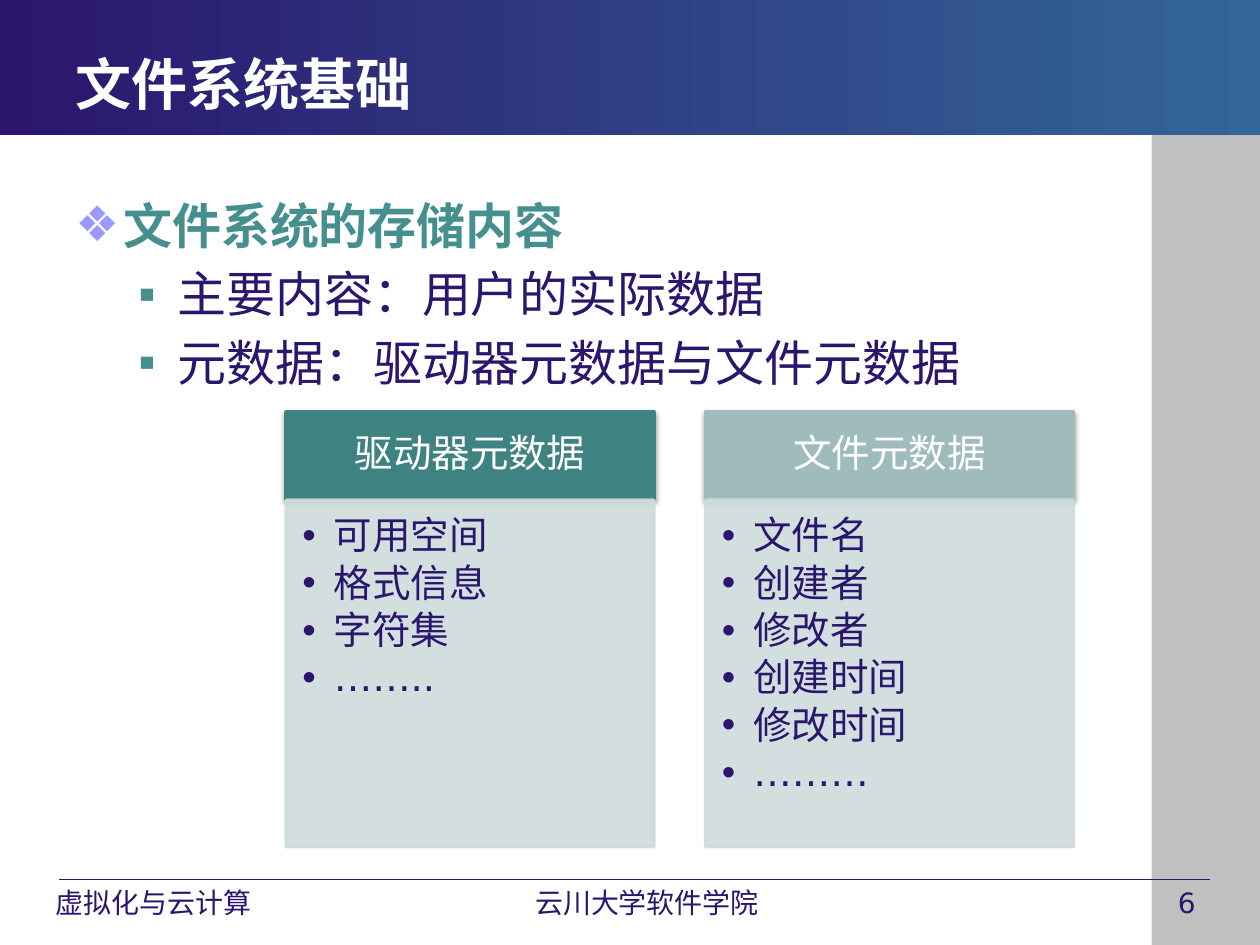
import pptx
import pptx.util
import pptx.dml.color
import pptx.enum.shapes
import pptx.enum.text
import pptx.oxml
import pptx.oxml.ns
import lxml.etree

Pt = pptx.util.Pt
ALIGN = pptx.enum.text.PP_ALIGN
ANCHOR = pptx.enum.text.MSO_ANCHOR
RECT = pptx.enum.shapes.MSO_SHAPE.RECTANGLE
NAVY, TEAL, WHITE = "2B166E", "458F8F", "FFFFFF"

prs = pptx.Presentation()
prs.slide_width = pptx.util.Inches(10)
prs.slide_height = pptx.util.Inches(7.5)
col = prs.slide_width // 100
row = prs.slide_height // 75
s = prs.slides.add_slide(prs.slide_layouts[6])
rgb = pptx.dml.color.RGBColor.from_string
qn = pptx.oxml.ns.qn


def box(x, y, w, h, fill=None, line=None, alpha=None, shadow=False):
    at = int(x * col), int(y * row), int(w * col), int(h * row)
    if fill is None:
        return s.shapes.add_textbox(*at)
    sp = s.shapes.add_shape(RECT, *at)
    sp.shadow.inherit = False
    sp.fill.solid()
    sp.fill.fore_color.rgb = rgb(fill)
    sp.line.fill.background()
    if line:
        sp.line.color.rgb = rgb(line)
        sp.line.width = Pt(2)
    if alpha:
        for clr in sp._element.spPr.iter(qn("a:srgbClr")):
            lxml.etree.SubElement(clr, qn("a:alpha"), val=str(alpha * 1000))
    if shadow:
        sp._element.spPr.find(qn("a:effectLst")).append(pptx.oxml.parse_xml(
            f'<a:outerShdw {pptx.oxml.ns.nsdecls("a")} blurRad="39370" dist="20320" dir="5400000" rotWithShape="0">'
            '<a:srgbClr val="000000"><a:alpha val="38000"/></a:srgbClr></a:outerShdw>'))
    return sp


def write(sp, text, size=16, color=NAVY, bold=False, font="DejaVu Sans", align=ALIGN.LEFT,
          anchor=ANCHOR.TOP, insets=(1, 0.5, 1, 0.5), before=0, after=0, spacing=1,
          bullet=None, bullet_color=None, indent=(0, 0), more=False):
    tf = sp.text_frame
    tf.word_wrap = True
    tf.vertical_anchor = anchor
    tf.margin_left, tf.margin_top, tf.margin_right, tf.margin_bottom = [int(i * col) for i in insets]
    p = tf.add_paragraph() if more else tf.paragraphs[0]
    p.alignment = align
    p.line_spacing = spacing
    p.space_before, p.space_after = Pt(before), Pt(after)
    if bullet:
        pPr = p._p.get_or_add_pPr()
        pPr.set("marL", str(int(indent[0] * col)))
        pPr.set("indent", str(int(-indent[1] * col)))
        clr = lxml.etree.SubElement(pPr, qn("a:buClr"))
        lxml.etree.SubElement(clr, qn("a:srgbClr"), val=bullet_color or color)
        lxml.etree.SubElement(pPr, qn("a:buFont"), typeface="Arial")
        lxml.etree.SubElement(pPr, qn("a:buChar"), char=bullet)
    r = p.add_run()
    r.text = text
    r.font.size, r.font.bold, r.font.name = Pt(size), bold, font
    r.font.color.rgb = rgb(color)
    lxml.etree.SubElement(r._r.get_or_add_rPr(), qn("a:ea"), typeface=font)


box(91.4, 10.7, 8.6, 64.3, fill="C0C0C0")
rule = s.shapes.add_connector(pptx.enum.shapes.MSO_CONNECTOR.STRAIGHT,
                              int(4.7 * col), int(69.8 * row), 96 * col, int(69.8 * row))
rule.line.color.rgb = rgb(NAVY)
rule.line.width = Pt(0.75)
lxml.etree.SubElement(rule._element.spPr, qn("a:effectLst"))

banner = box(0, 0, 100, 10.7, fill=NAVY)
banner.fill.gradient()
banner.fill.gradient_angle = 0
for stop, position, color in zip(banner.fill.gradient_stops, (0, 1), (NAVY, "336699")):
    stop.position = position
    stop.color.rgb = rgb(color)

for x, w, text, align in [(92.5, 7.1, "6", ALIGN.LEFT),
                          (2.5, 19.4, "虚拟化与云计算", ALIGN.CENTER),
                          (40.1, 22.5, "云川大学软件学院", ALIGN.CENTER)]:
    write(box(x, 69.8, w, 3.5), text, align=align)

body = box(5, 15, 90, 17)
write(body, "文件系统的存储内容", size=28, color=TEAL, bold=True, before=5.6,
      bullet="❖", bullet_color="9999FF", indent=(3.8, 3.8))
for text in ["主要内容：用户的实际数据", "元数据：驱动器元数据与文件元数据"]:
    write(body, text, size=28, font="Arial", before=5.6,
          bullet="▪", bullet_color=TEAL, indent=(8.1, 3.1), more=True)

write(box(5, 3.5, 67.5, 6.2), "文件系统基础", size=32, color=WHITE, bold=True, anchor=ANCHOR.MIDDLE)

cards = [
    ("驱动器元数据", "3F8282", ["可用空间", "格式信息", "字符集", "…….."]),
    ("文件元数据", "9FBBBB", ["文件名", "创建者", "修改者", "创建时间", "修改时间", "………"]),
]
for i, (heading, color, items) in enumerate(cards):
    x = 22.7 + i * 33.3
    write(box(x, 32.7, 29.2, 6.9, fill=color, line=color, shadow=True), heading, size=22, color=WHITE,
          align=ALIGN.CENTER, anchor=ANCHOR.MIDDLE, insets=(1.7, 1, 1.7, 1), spacing=0.9)
    panel = box(x, 39.7, 29.2, 27.5, fill="CFDBDB", line="CFDBDB", alpha=90)
    for n, item in enumerate(items):
        write(panel, item, size=22, insets=(1.3, 1.3, 1.7, 1.9), after=3.3, spacing=0.9,
              bullet="•", indent=(2.5, 2.5), more=n > 0)

prs.save("out.pptx")
